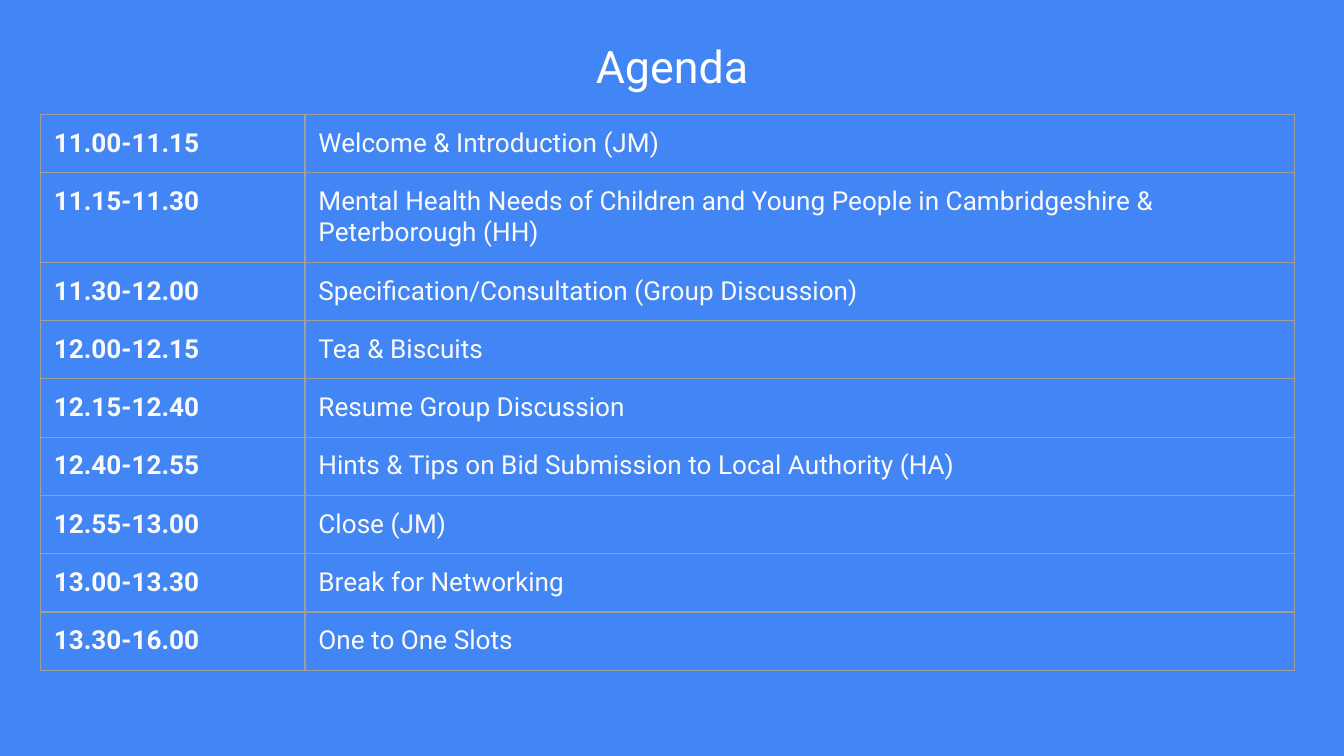
from lxml.etree import SubElement
from pptx import Presentation
from pptx.dml.color import RGBColor
from pptx.enum.text import MSO_ANCHOR, PP_ALIGN
from pptx.oxml.ns import qn
from pptx.util import Pt

BORDER = "9E9E9E"
PADDING = Pt(7.2)
SESSIONS = [
    ("11.00-11.15", "Welcome & Introduction (JM)"),
    ("11.15-11.30", "Mental Health Needs of Children and Young People "
                    "in Cambridgeshire & Peterborough (HH)"),
    ("11.30-12.00", "Specification/Consultation (Group Discussion)"),
    ("12.00-12.15", "Tea & Biscuits"),
    ("12.15-12.40", "Resume Group Discussion"),
    ("12.40-12.55", "Hints & Tips on Bid Submission to Local Authority (HA)"),
    ("12.55-13.00", "Close (JM)"),
    ("13.00-13.30", "Break for Networking"),
    ("13.30-16.00", "One to One Slots"),
]


def add_text(frame, text, size, color, bold=False):
    """Write one run into the first paragraph, and return that paragraph."""
    frame.word_wrap = True
    paragraph = frame.paragraphs[0]
    run = paragraph.add_run()
    run.text = text
    run.font.name = "Roboto"
    run.font.size = Pt(size)
    run.font.bold = bold
    run.font.color.rgb = RGBColor.from_string(color)
    return paragraph


def set_padding_and_borders(cell):
    cell.margin_left = cell.margin_right = PADDING
    cell.margin_top = cell.margin_bottom = PADDING
    properties = cell._tc.get_or_add_tcPr()
    for side in ("a:lnL", "a:lnR", "a:lnT", "a:lnB"):
        line = SubElement(properties, qn(side), w=str(Pt(0.75)))
        fill = SubElement(line, qn("a:solidFill"))
        SubElement(fill, qn("a:srgbClr"), val=BORDER)


presentation = Presentation()
presentation.slide_width = Pt(720)
presentation.slide_height = Pt(405)
slide = presentation.slides.add_slide(presentation.slide_layouts[6])
slide.background.fill.solid()
slide.background.fill.fore_color.rgb = RGBColor.from_string("4285F4")

title = slide.shapes.add_textbox(Pt(232), Pt(8.8), Pt(256), Pt(52.5)).text_frame
title.vertical_anchor = MSO_ANCHOR.MIDDLE
title.margin_left = title.margin_right = PADDING
title.margin_top = title.margin_bottom = PADDING
add_text(title, "Agenda", 24, "FFFFFF").alignment = PP_ALIGN.CENTER

agenda = slide.shapes.add_table(
    len(SESSIONS), 2, Pt(21.6), Pt(61.2), Pt(671.8), Pt(272.2)).table
agenda.first_row = False
agenda.horz_banding = False
agenda.columns[0].width = Pt(141.8)
agenda.columns[1].width = Pt(530)

for row, session in enumerate(SESSIONS):
    agenda.rows[row].height = Pt(30.24)
    for column, text in enumerate(session):
        cell = agenda.cell(row, column)
        set_padding_and_borders(cell)
        cell.fill.background()
        add_text(cell.text_frame, text, 14, "FAFAFA", bold=column == 0)

presentation.save("out.pptx")
